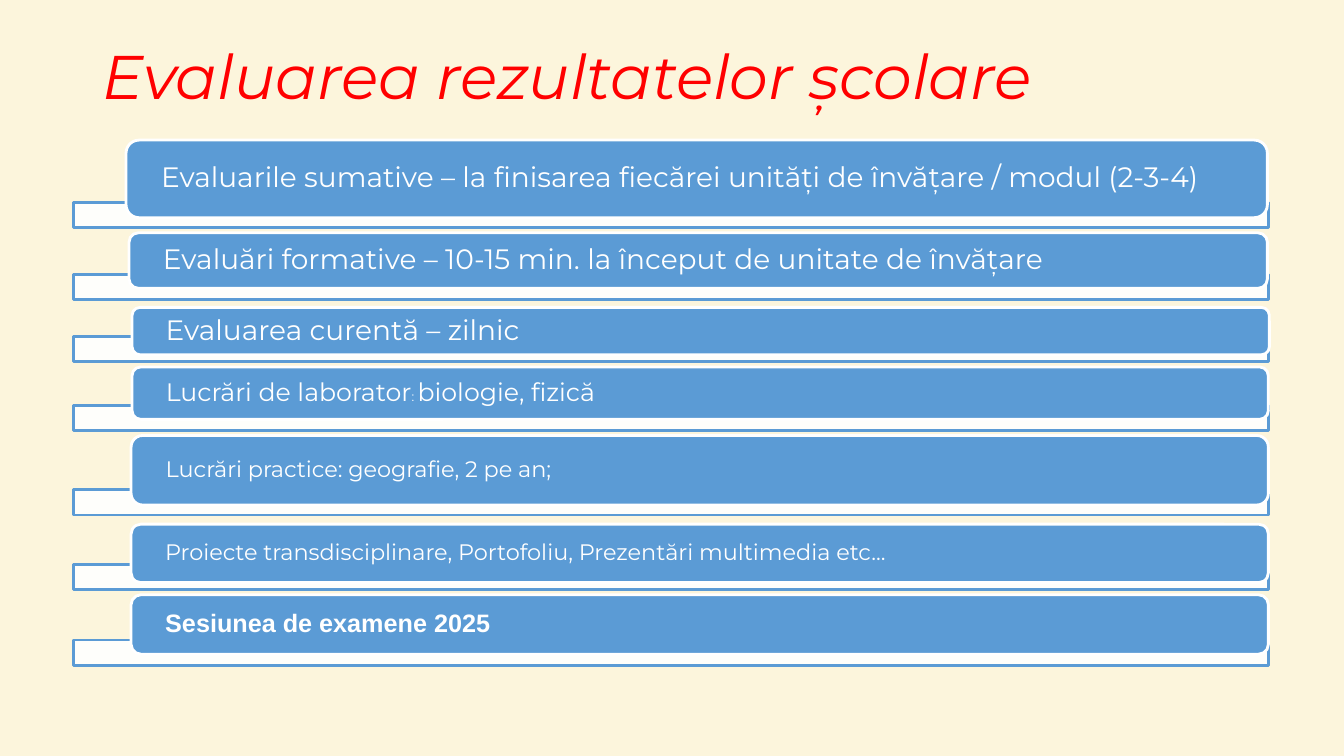
from lxml.etree import SubElement
from pptx import Presentation
from pptx.dml.color import RGBColor
from pptx.enum.shapes import MSO_SHAPE as Shape
from pptx.enum.text import MSO_ANCHOR as Anchor, PP_ALIGN as Align
from pptx.oxml.ns import qn
from pptx.util import Inches, Pt

COLORS = {"paper": "FCF5DC", "title": "FF0000", "blue": "5B9BD5", "white": "FFFFFF"}
STRIP_LEFT, STRIP_WIDTH, STRIP_HEIGHT = 0.73, 11.85, 0.25
FONT = "Montserrat"

# strip top, bar box (left, top, width, height), font, bold, runs (text, size)
ROWS = [
    (2.01, (1.25, 1.39, 11.32, 0.77), FONT, False,
     [("Evaluarile sumative – la finisarea fiecărei unități de învățare / modul (2-3-4)", 20)]),
    (2.72, (1.28, 2.31, 11.29, 0.55), FONT, False,
     [("Evaluări formative – 10-15 min. la început de unitate de învățare", 20)]),
    (3.34, (1.31, 3.05, 11.28, 0.47), FONT, False,
     [("Evaluarea curentă – zilnic", 20)]),
    (4.02, (1.31, 3.64, 11.27, 0.52), FONT, False,
     [("Lucrări de laborator", 18), (": ", 9), ("biologie, fizică", 18)]),
    (4.86, (1.3, 4.32, 11.28, 0.69), FONT, False,
     [("Lucrări practice: geografie, 2 pe an;", 16)]),
    (5.6, (1.3, 5.2, 11.28, 0.58), FONT, False,
     [("Proiecte transdisciplinare, Portofoliu, Prezentări multimedia etc...", 16)]),
    (6.35, (1.3, 5.9, 11.28, 0.59), "Arial", True,
     [("Sesiunea de examene 2025", 18)]),
]


def color(name):
    return RGBColor.from_string(COLORS[name])


def add_box(slide, kind, box, fill, line):
    shape = slide.shapes.add_shape(kind, *map(Inches, box))
    shape.shadow.inherit = False
    shape.fill.solid()
    shape.fill.fore_color.rgb = color(fill)
    shape.line.color.rgb = color(line)
    shape.line.width = Pt(2)
    return shape


def add_strip(slide, top):
    """Add the slightly transparent strip behind a bar."""
    box = (STRIP_LEFT, top, STRIP_WIDTH, STRIP_HEIGHT)
    strip = add_box(slide, Shape.RECTANGLE, box, "white", "blue")
    fill = strip.fill._xPr.find(qn("a:solidFill"))
    SubElement(fill[0], qn("a:alpha"), val="90000")


def write(frame, runs, font, ink, bold=False, italic=False):
    frame.word_wrap = True
    frame.vertical_anchor = Anchor.MIDDLE
    line = frame.paragraphs[0]
    line.alignment = Align.LEFT
    line.line_spacing = 0.9
    for text, size in runs:
        run = line.add_run()
        run.text = text
        run.font.name = font
        run.font.size = Pt(size)
        run.font.bold = bold
        run.font.italic = italic
        run.font.color.rgb = color(ink)


def add_bar(slide, box, font, bold, runs):
    bar = add_box(slide, Shape.ROUNDED_RECTANGLE, box, "blue", "white")
    frame = bar.text_frame
    # The rounded corners add a little to each inset.
    frame.margin_left = frame.margin_right = Inches(0.31)
    frame.margin_top = frame.margin_bottom = 0
    write(frame, runs, font, "white", bold)


def add_title(slide, text):
    title = slide.shapes.add_textbox(Inches(0.92), Inches(0.4), Inches(11.5), Inches(0.78))
    write(title.text_frame, [(text, 44)], FONT, "title", italic=True)


def main():
    deck = Presentation()
    deck.slide_width = Inches(13.33)
    deck.slide_height = Inches(7.5)
    slide = deck.slides.add_slide(deck.slide_layouts[6])
    slide.background.fill.solid()
    slide.background.fill.fore_color.rgb = color("paper")
    add_title(slide, "Evaluarea rezultatelor școlare")
    for top, box, font, bold, runs in ROWS:
        add_strip(slide, top)
        add_bar(slide, box, font, bold, runs)
    deck.save("out.pptx")


if __name__ == "__main__":
    main()
